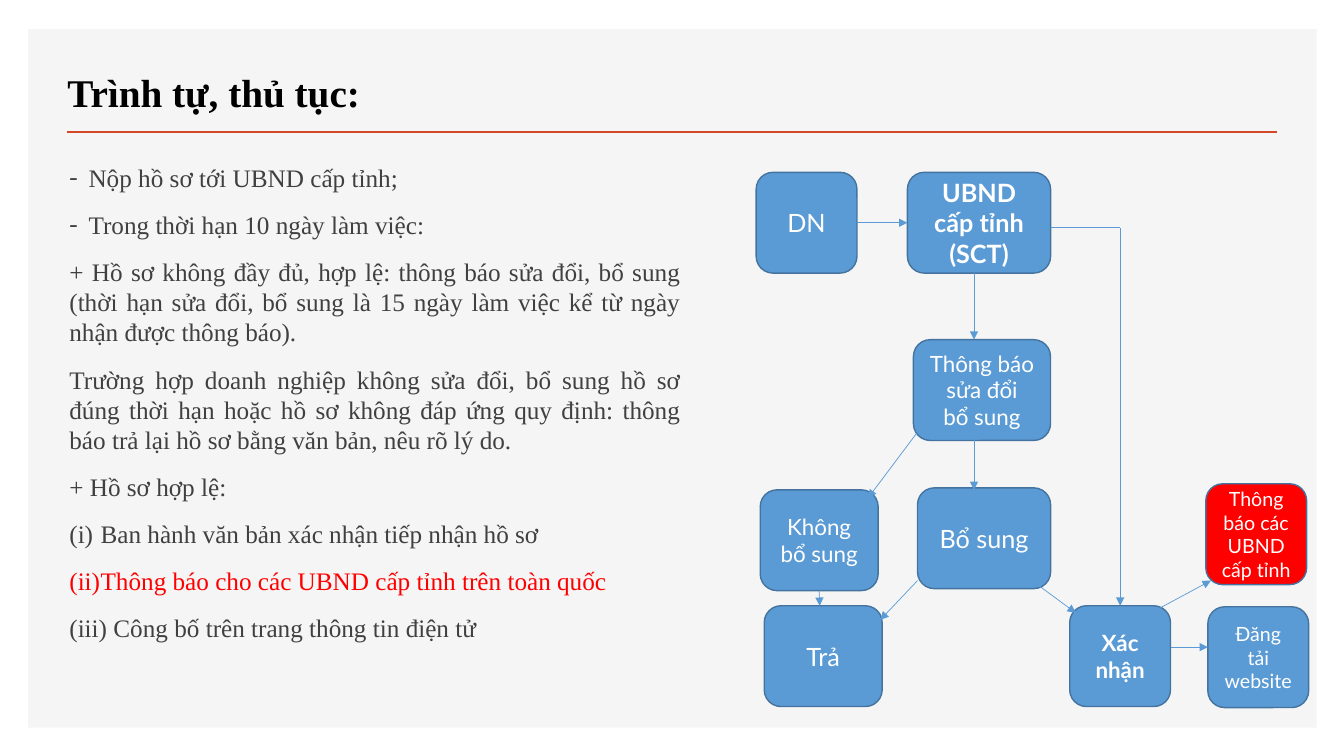
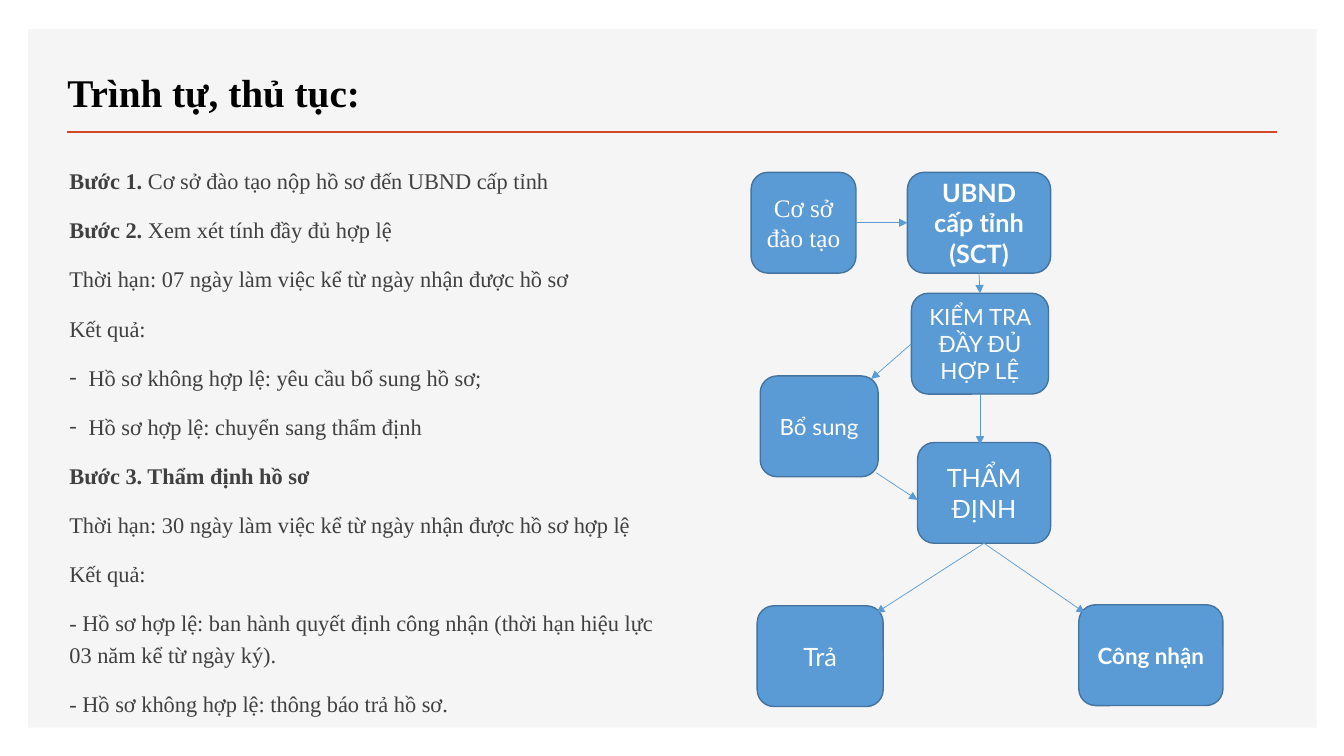
from dataclasses import dataclass

from lxml.etree import SubElement
from pptx import Presentation
from pptx.dml.color import RGBColor
from pptx.enum.shapes import MSO_CONNECTOR as Connector, MSO_SHAPE as Shape
from pptx.enum.text import MSO_ANCHOR as Anchor, PP_ALIGN as Align
from pptx.oxml.ns import qn
from pptx.util import Inches, Pt

TOP, LEFT, BOTTOM, RIGHT = range(4)


@dataclass(frozen=True)
class Theme:
    panel: str = "F5F5F5"
    accent: str = "D24726"
    title: str = "000000"
    body: str = "404040"
    alert: str = "FF0000"
    node: str = "5B9BD5"
    node_edge: str = "43739E"
    node_text: str = "FFFFFF"
    serif: str = "Times New Roman"
    sans: str = "Lato"
    title_size: int = 28
    large: int = 18
    medium: int = 16
    small: int = 14


THEME = Theme()


@dataclass(frozen=True)
class BodyPara:
    text: str
    lead: str = ""
    bullet: str = ""
    color: str = THEME.body


@dataclass(frozen=True)
class Node:
    """A flow step; each line of its label is a paragraph."""
    label: str
    left: float
    top: float
    width: float = 1
    size: int = THEME.large
    bold: bool = False
    font: str = THEME.sans
    fill: str = THEME.node


@dataclass(frozen=True)
class Arrow:
    """Each end is a point (x, y) or a join (node name, side)."""
    start: tuple
    end: tuple
    head: bool = True


def rgb(value):
    return RGBColor.from_string(value)


def add_run(para, text, font, size, color, bold=False):
    span = para.add_run()
    span.text = text
    span.font.name = font
    span.font.size = Pt(size)
    span.font.bold = bold
    span.font.color.rgb = rgb(color)


def add_box(slide, preset, left, top, width, height, fill):
    box = slide.shapes.add_shape(
        preset, Inches(left), Inches(top), Inches(width), Inches(height))
    box.shadow.inherit = False
    box.fill.solid()
    box.fill.fore_color.rgb = rgb(fill)
    return box


def add_text_box(slide, left, top, width, height, anchor):
    frame = slide.shapes.add_textbox(
        Inches(left), Inches(top), Inches(width), Inches(height)).text_frame
    frame.word_wrap = True
    frame.vertical_anchor = anchor
    return frame


def add_line(slide, start, end, color, width):
    line = slide.shapes.add_connector(
        Connector.STRAIGHT, *(Inches(value) for value in (*start, *end)))
    line.line.color.rgb = rgb(color)
    line.line.width = Pt(width)
    SubElement(line._element.spPr, qn("a:effectLst"))
    return line


def add_base(deck, title):
    """Start a slide with the panel, title and rule that all slides share."""
    slide = deck.slides.add_slide(deck.slide_layouts[6])
    panel = add_box(slide, Shape.RECTANGLE, 0.28, 0.29, 12.78, 6.93, THEME.panel)
    panel.line.fill.background()
    add_line(slide, (0.66, 1.31), (12.67, 1.31), THEME.accent, 2)
    frame = add_text_box(slide, 0.57, 0.49, 10.79, 0.7, Anchor.BOTTOM)
    add_run(frame.paragraphs[0], title, THEME.serif, THEME.title_size,
            THEME.title, True)
    return slide


def set_bullet(para, bullet):
    """Add a hanging dash, or automatic (i), (ii), (iii) for "roman"."""
    roman = bullet == "roman"
    indent = Inches(0.31 if roman else 0.19)
    props = para._p.get_or_add_pPr()
    props.set("marL", str(indent))
    props.set("indent", str(-indent))
    if roman:
        SubElement(props, qn("a:buAutoNum"), type="romanLcParenBoth")
    else:
        SubElement(props, qn("a:buFont"), typeface=THEME.serif)
        SubElement(props, qn("a:buChar"), char=bullet)


def add_body(slide, items, size, align, spacing):
    frame = add_text_box(slide, 0.59, 1.56, 6.26, 5.64, Anchor.TOP)
    for index, item in enumerate(items):
        para = frame.add_paragraph() if index else frame.paragraphs[0]
        para.alignment = align
        para.line_spacing = spacing
        para.space_before = para.space_after = Pt(6)
        if item.bullet:
            set_bullet(para, item.bullet)
        for text, bold in ((item.lead, True), (item.text, False)):
            if text:
                add_run(para, text, THEME.serif, size, item.color, bold)


def add_node(slide, node):
    box = add_box(slide, Shape.ROUNDED_RECTANGLE, node.left, node.top,
                  node.width, 1, node.fill)
    box.line.color.rgb = rgb(THEME.node_edge)
    box.line.width = Pt(1)
    frame = box.text_frame
    frame.word_wrap = True
    frame.vertical_anchor = Anchor.MIDDLE
    for index, text in enumerate(node.label.split("\n")):
        para = frame.add_paragraph() if index else frame.paragraphs[0]
        para.alignment = Align.CENTER
        add_run(para, text, node.font, node.size, THEME.node_text, node.bold)
    return box


def add_arrow(slide, arrow, boxes):
    ends = (arrow.start, arrow.end)
    joined = [isinstance(end[0], str) for end in ends]
    points = [(0, 0) if join else end for end, join in zip(ends, joined)]
    line = add_line(slide, *points, THEME.node, 0.5)
    for end, join, connect in zip(ends, joined,
                                  (line.begin_connect, line.end_connect)):
        if join:
            name, side = end
            connect(boxes[name], side)
    if arrow.head:
        SubElement(line.line._get_or_add_ln(), qn("a:tailEnd"), type="triangle")


def add_flow(slide, nodes, arrows):
    boxes = {name: add_node(slide, node) for name, node in nodes.items()}
    for arrow in arrows:
        add_arrow(slide, arrow, boxes)


TITLE = "Trình tự, thủ tục:"
PROVINCE = Node("UBND cấp tỉnh (SCT)", 9, 1.71, 1.42, bold=True)
SUBMIT = Arrow(("applicant", RIGHT), ("province", LEFT))

FILING_BODY = [
    BodyPara("Nộp hồ sơ tới UBND cấp tỉnh;", bullet="-"),
    BodyPara("Trong thời hạn 10 ngày làm việc:", bullet="-"),
    BodyPara("+ Hồ sơ không đầy đủ, hợp lệ: thông báo sửa đổi, bổ sung (thời hạn "
             "sửa đổi, bổ sung là 15 ngày làm việc kể từ ngày nhận được thông báo)."),
    BodyPara("Trường hợp doanh nghiệp không sửa đổi, bổ sung hồ sơ đúng thời hạn "
             "hoặc hồ sơ không đáp ứng quy định: thông báo trả lại hồ sơ bằng "
             "văn bản, nêu rõ lý do."),
    BodyPara("+ Hồ sơ hợp lệ:"),
    BodyPara("Ban hành văn bản xác nhận tiếp nhận hồ sơ", bullet="roman"),
    BodyPara("Thông báo cho các UBND cấp tỉnh trên toàn quốc", bullet="roman",
             color=THEME.alert),
    BodyPara(" Công bố trên trang thông tin điện tử", bullet="roman"),
]
FILING_NODES = {
    "applicant": Node("DN", 7.5, 1.71),
    "province": PROVINCE,
    "notice": Node("Thông báo sửa đổi\nbổ sung", 9.06, 3.37, 1.36, THEME.medium),
    "supplement": Node("Bổ sung", 9.1, 4.84, 1.32),
    "no_supplement": Node("Không bổ sung", 7.54, 4.86, 1.17, THEME.medium),
    "returned": Node("Trả", 7.58, 6.01, 1.17),
    "confirmed": Node("Xác nhận", 10.61, 6.01, size=THEME.medium, bold=True),
    "website": Node("Đăng tải website", 11.98, 6.02, size=THEME.small),
    "provinces": Node("Thông báo các UBND cấp tỉnh", 11.96, 4.8,
                      size=THEME.small, fill=THEME.alert),
}
FILING_ARROWS = [
    SUBMIT,
    Arrow((9.66, 2.71), (9.66, 3.37)),
    Arrow((9.66, 4.37), (9.66, 4.86)),
    Arrow((9.09, 4.3), (8.61, 4.94)),
    Arrow(("no_supplement", BOTTOM), (8.13, 6.01)),
    Arrow((9.1, 5.76), (8.73, 6.15)),
    Arrow((10.29, 5.8), (10.67, 6.08)),
    Arrow((11.49, 6.04), (12.01, 5.76)),
    Arrow((11.61, 6.42), (11.98, 6.42)),
    Arrow((10.42, 2.26), (11.11, 2.26), head=False),
    Arrow((11.11, 2.26), ("confirmed", TOP)),
]

REVIEW_BODY = [
    BodyPara("Cơ sở đào tạo nộp hồ sơ đến UBND cấp tỉnh", lead="Bước 1. "),
    BodyPara("Xem xét tính đầy đủ hợp lệ", lead="Bước 2. "),
    BodyPara("Thời hạn: 07 ngày làm việc kể từ ngày nhận được hồ sơ"),
    BodyPara("Kết quả:"),
    BodyPara("Hồ sơ không hợp lệ: yêu cầu bổ sung hồ sơ;", bullet="-"),
    BodyPara("Hồ sơ hợp lệ: chuyển sang thẩm định", bullet="-"),
    BodyPara("", lead="Bước 3. Thẩm định hồ sơ"),
    BodyPara("Thời hạn: 30 ngày làm việc kể từ ngày nhận được hồ sơ hợp lệ"),
    BodyPara("Kết quả:"),
    BodyPara("- Hồ sơ hợp lệ: ban hành quyết định công nhận (thời hạn hiệu lực "
             "03 năm kể từ ngày ký)."),
    BodyPara("- Hồ sơ không hợp lệ: thông báo trả hồ sơ."),
]
REVIEW_NODES = {
    "applicant": Node("Cơ sở đào tạo", 7.45, 1.71, 1.04, font=THEME.serif),
    "province": PROVINCE,
    "check": Node("KIỂM TRA ĐẦY ĐỦ HỢP LỆ", 9.04, 2.91, 1.36, THEME.medium),
    "supplement": Node("Bổ sung", 7.54, 3.73, 1.17, THEME.medium),
    "appraisal": Node("THẨM ĐỊNH", 9.1, 4.39, 1.32),
    "returned": Node("Trả", 7.51, 6.01, 1.25),
    "recognised": Node("Công nhận", 10.7, 6, 1.43, THEME.medium, True),
}
REVIEW_ARROWS = [
    SUBMIT,
    Arrow(("province", BOTTOM), ("check", TOP)),
    Arrow(("check", LEFT), (8.64, 3.76)),
    Arrow(("check", BOTTOM), (9.72, 4.41)),
    Arrow((8.69, 4.69), (9.1, 4.96)),
    Arrow(("appraisal", BOTTOM), (8.69, 6.08)),
    Arrow(("appraisal", BOTTOM), (10.76, 6.08)),
]


def main():
    deck = Presentation()
    deck.slide_width, deck.slide_height = Inches(13.33), Inches(7.5)

    filing = add_base(deck, TITLE)
    add_body(filing, FILING_BODY, THEME.large, Align.JUSTIFY, 1.0)
    add_flow(filing, FILING_NODES, FILING_ARROWS)

    review = add_base(deck, TITLE)
    add_body(review, REVIEW_BODY, THEME.medium, Align.LEFT, 1.2)
    add_flow(review, REVIEW_NODES, REVIEW_ARROWS)

    deck.save("out.pptx")


if __name__ == "__main__":
    main()
